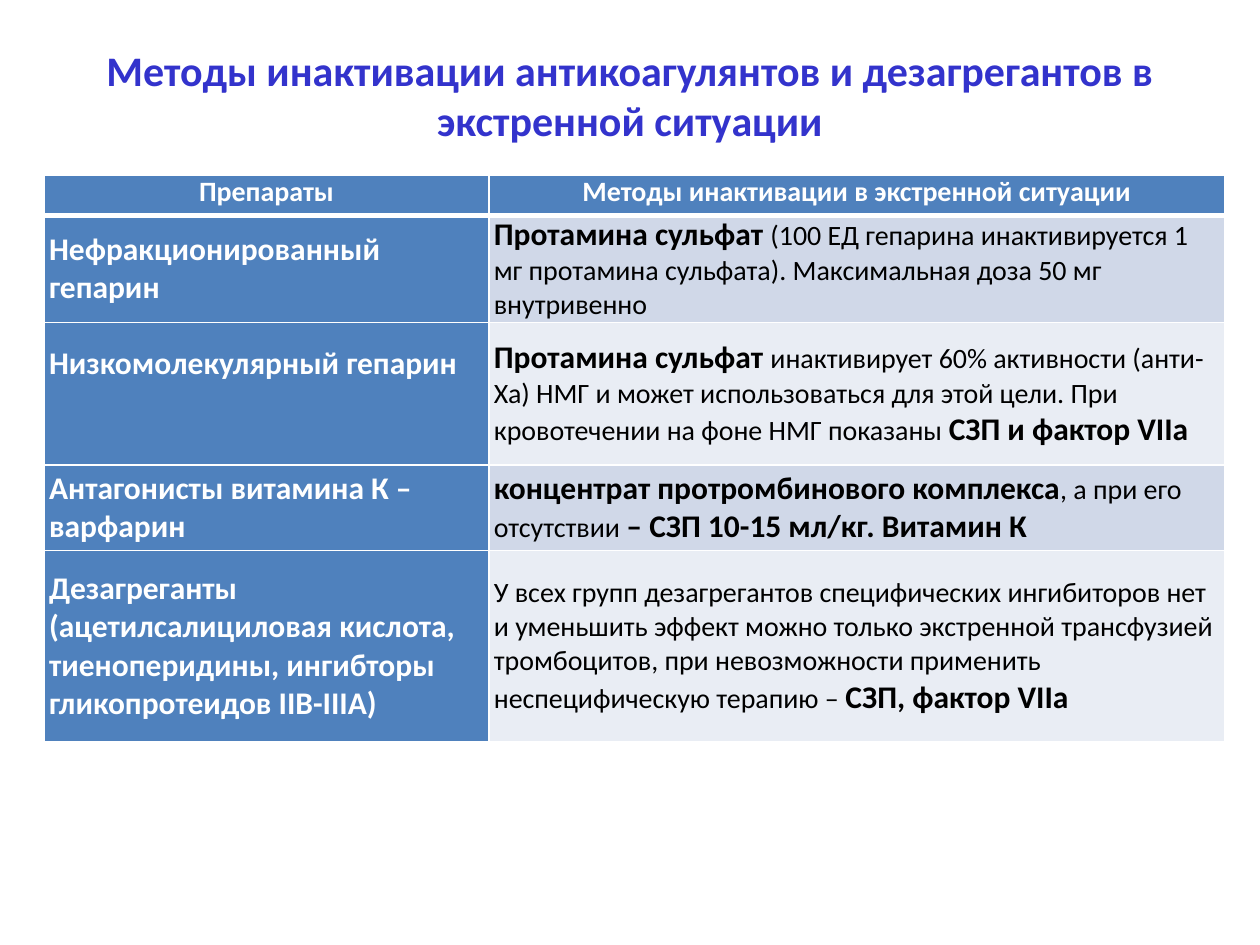
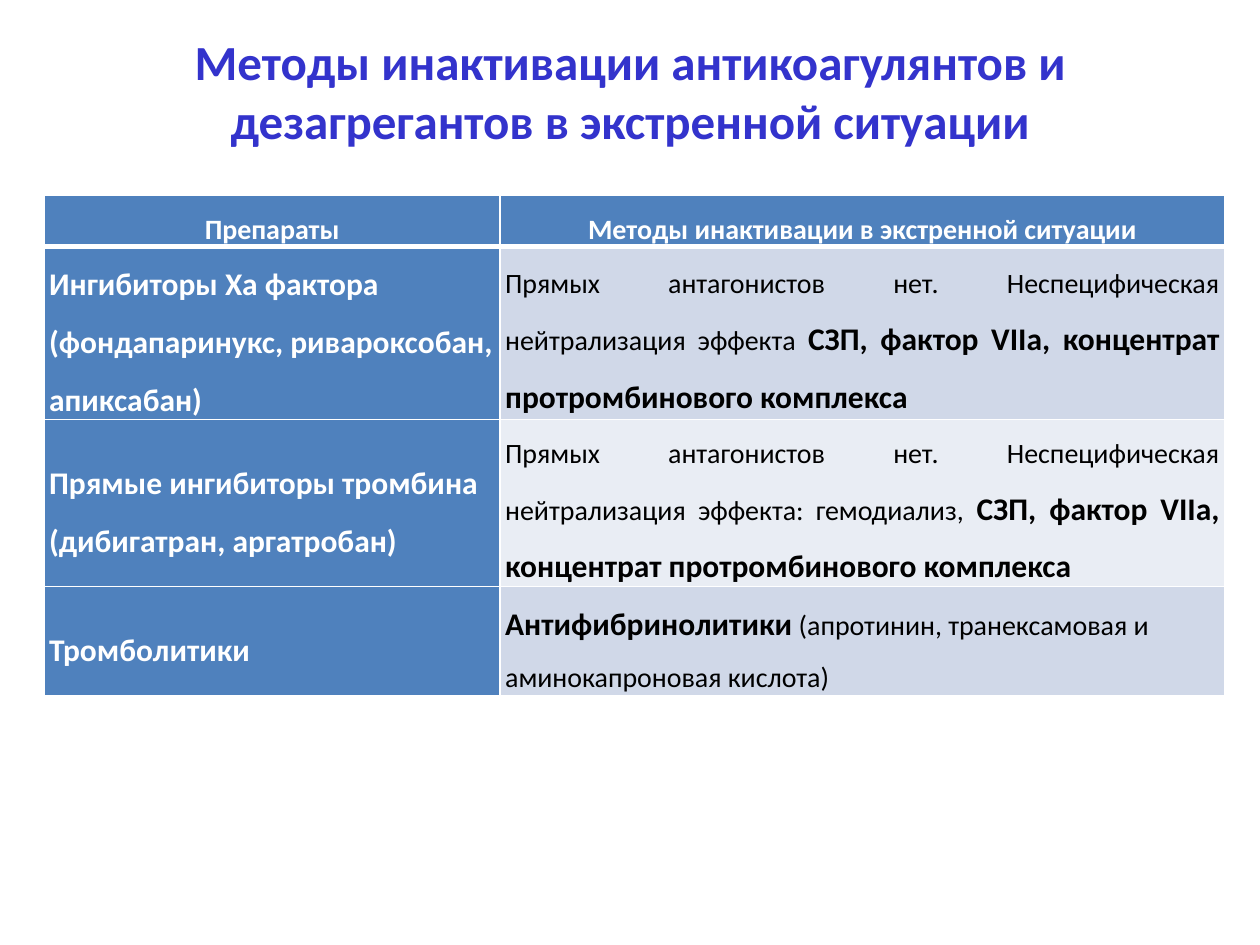
import pptx
import pptx.util
import pptx.dml.color
import pptx.enum.text
import lxml.etree
from pptx.util import Inches, Pt
from pptx.enum.text import MSO_ANCHOR, PP_ALIGN

FONT = "Calibri"
TITLE_COLOUR = "3333CC"
HEADER_FILL = "4F81BD"
BAND_FILLS = ["D0D8E8", "E9EDF4"]
WHITE, BLACK = "FFFFFF", "000000"
TITLE = "Методы инактивации антикоагулянтов и дезагрегантов в экстренной ситуации"
HEADERS = ("Препараты", "Методы инактивации в экстренной ситуации")

# Text between asterisks is bold and larger.
slides = [
    {
        "title_size": 24, "title_bottom": 0.4, "table_top": 1.39, "line_spacing": 1.0,
        "columns": [3.53, 5.84], "heights": [0.32, 0.84, 1.13, 0.68, 1.52],
        "justified_rows": [], "raised_rows": [2],
        "rows": [
            ("*Нефракционированный гепарин*",
             "*Протамина сульфат *(100 ЕД гепарина инактивируется 1 мг протамина сульфата). "
             "Максимальная доза 50 мг внутривенно"),
            ("*Низкомолекулярный гепарин*",
             "*Протамина сульфат *инактивирует 60% активности (анти-Ха) НМГ и может использоваться "
             "для этой цели. При кровотечении на фоне НМГ показаны *СЗП и фактор VIIa*"),
            ("*Антагонисты витамина К – варфарин*",
             "*концентрат протромбинового комплекса*, а при его отсутствии "
             "*– СЗП 10-15 мл/кг. Витамин К*"),
            ("*Дезагреганты (ацетилсалициловая кислота, тиеноперидины, ингибторы "
             "гликопротеидов IIB-IIIA)*",
             "У всех групп дезагрегантов специфических ингибиторов нет и уменьшить эффект можно "
             "только экстренной трансфузией тромбоцитов, при невозможности применить "
             "неспецифическую терапию – *СЗП, фактор VIIa*"),
        ],
    },
    {
        "title_size": 28, "title_bottom": 0.46, "table_top": 1.55, "line_spacing": 1.5,
        "columns": [3.62, 5.75], "heights": [0.33, 1.04, 1.02, 0.6],
        "justified_rows": [1, 2], "raised_rows": [],
        "rows": [
            ("*Ингибиторы Ха фактора (фондапаринукс, ривароксобан, апиксабан)*",
             "Прямых антагонистов нет. Неспецифическая нейтрализация эффекта "
             "*СЗП, фактор VIIa, концентрат протромбинового комплекса*"),
            ("*Прямые ингибиторы тромбина (дибигатран, аргатробан)*",
             "Прямых антагонистов нет. Неспецифическая нейтрализация эффекта: гемодиализ, "
             "*СЗП, фактор VIIa, концентрат протромбинового комплекса*"),
            ("*Тромболитики*",
             "*Антифибринолитики* (апротинин, транексамовая и аминокапроновая кислота)"),
        ],
    },
]


def colour(hex_string):
    return pptx.dml.color.RGBColor.from_string(hex_string)


def set_borders(cell, bottom_width):
    """Draw white borders, 1 pt wide except at the bottom."""
    namespace = "{http://schemas.openxmlformats.org/drawingml/2006/main}"
    properties = cell._tc.get_or_add_tcPr()
    for side, width in (("L", 1), ("R", 1), ("T", 1), ("B", bottom_width)):
        line = lxml.etree.SubElement(properties, f"{namespace}ln{side}", w=str(Pt(width)))
        fill = lxml.etree.SubElement(line, f"{namespace}solidFill")
        lxml.etree.SubElement(fill, f"{namespace}srgbClr", val=WHITE)


presentation = pptx.Presentation()
presentation.slide_width = Inches(10)
presentation.slide_height = Inches(7.5)

for content in slides:
    slide = presentation.slides.add_slide(presentation.slide_layouts[5])

    title = slide.shapes.title
    title.left, title.top = Inches(0.5), Inches(0.3)
    title.width, title.height = Inches(9), Inches(1.25)
    title.text_frame.text = TITLE
    title.text_frame.vertical_anchor = MSO_ANCHOR.MIDDLE
    title.text_frame.margin_bottom = Inches(content["title_bottom"])
    paragraph = title.text_frame.paragraphs[0]
    paragraph.alignment = PP_ALIGN.CENTER
    paragraph.font.name = FONT
    paragraph.font.size = Pt(content["title_size"])
    paragraph.font.bold = True
    paragraph.font.color.rgb = colour(TITLE_COLOUR)

    rows = [HEADERS] + content["rows"]
    table = slide.shapes.add_table(
        len(rows), 2, Inches(0.35), Inches(content["table_top"]),
        Inches(9.37), Inches(sum(content["heights"]))).table
    for column, width in zip(table.columns, content["columns"]):
        column.width = Inches(width)

    for row_index, row in enumerate(rows):
        table.rows[row_index].height = Inches(content["heights"][row_index])
        is_header = row_index == 0
        for column_index, text in enumerate(row):
            cell = table.cell(row_index, column_index)
            is_method = column_index == 1 and not is_header
            cell.margin_left = cell.margin_right = Inches(0.04)
            cell.margin_top = cell.margin_bottom = 0
            cell.vertical_anchor = MSO_ANCHOR.TOP if is_header else MSO_ANCHOR.MIDDLE
            if column_index == 0 and row_index in content["raised_rows"]:
                cell.margin_bottom = Inches(0.48)
            set_borders(cell, 3 if is_header else 1)
            cell.fill.solid()
            cell.fill.fore_color.rgb = colour(
                BAND_FILLS[(row_index - 1) % 2] if is_method else HEADER_FILL)

            paragraph = cell.text_frame.paragraphs[0]
            paragraph.line_spacing = content["line_spacing"]
            if is_header:
                paragraph.alignment = PP_ALIGN.CENTER
            elif is_method and row_index in content["justified_rows"]:
                paragraph.alignment = PP_ALIGN.JUSTIFY
            paragraph.font.name = FONT
            paragraph.font.color.rgb = colour(BLACK if is_method else WHITE)
            for part_index, part in enumerate(text.split("*")):
                if part:
                    is_strong = part_index % 2 == 1
                    run = paragraph.add_run()
                    run.text = part
                    run.font.size = Pt(18 if is_strong else 16)
                    run.font.bold = is_strong or is_header

presentation.save("out.pptx")
